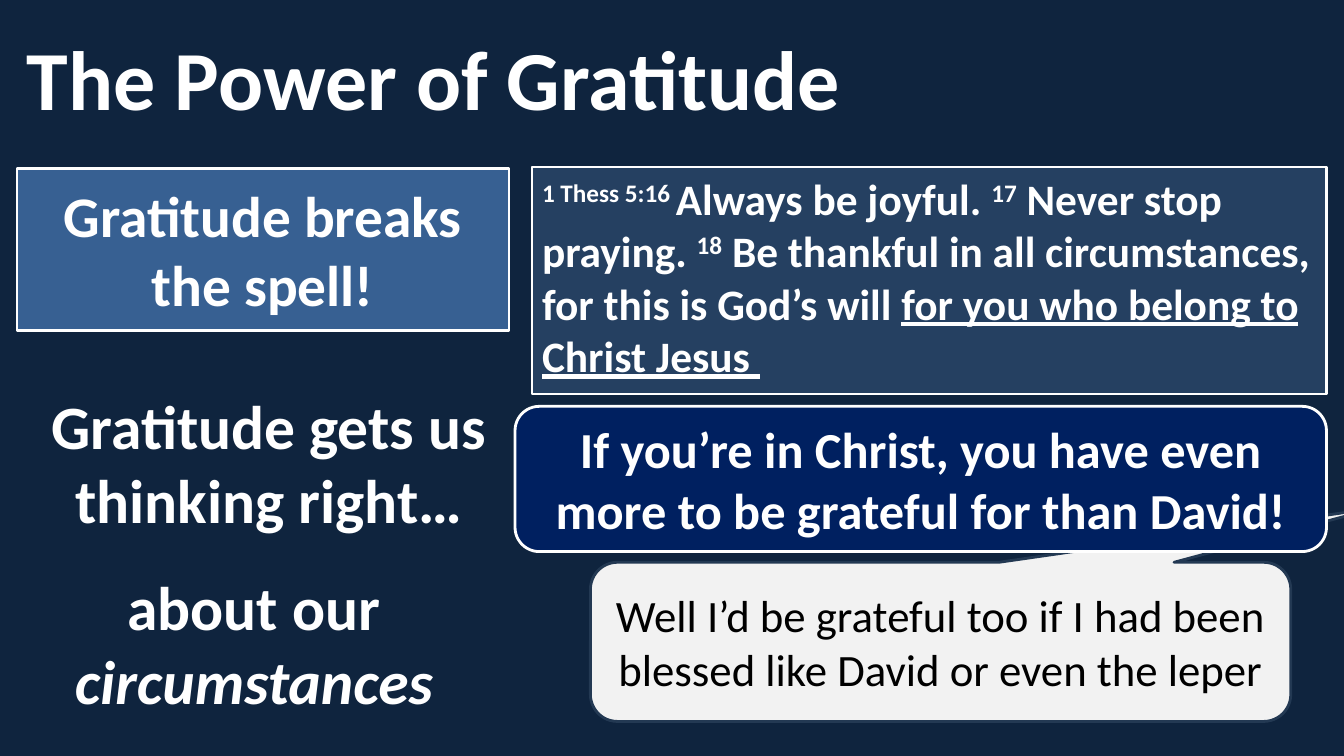
from dataclasses import dataclass
from typing import Optional

from pptx import Presentation
from pptx.dml.color import RGBColor
from pptx.enum.shapes import MSO_SHAPE
from pptx.enum.text import MSO_ANCHOR, PP_ALIGN
from pptx.util import Cm, Pt

WHITE = RGBColor(0xFF, 0xFF, 0xFF)
BLACK = RGBColor(0x00, 0x00, 0x00)
BACKGROUND = RGBColor(0x0F, 0x24, 0x3E)
STEEL = RGBColor(0x37, 0x60, 0x92)
SLATE = RGBColor(0x25, 0x40, 0x61)
NAVY = RGBColor(0x00, 0x20, 0x60)
PALE = RGBColor(0xF2, 0xF2, 0xF2)
CALLOUT_EDGE = RGBColor(0x23, 0x39, 0x53)


@dataclass
class Span:
    text: str
    italic: Optional[bool] = None
    underline: Optional[bool] = None
    raised: bool = False


@dataclass
class Panel:
    """A block of text; lengths are centimetres, and no shape means a text box."""
    left: float
    top: float
    width: float
    height: float
    size: float
    spans: list[Span]
    shape: Optional[MSO_SHAPE] = None
    fill: Optional[RGBColor] = None
    line: Optional[RGBColor] = None
    line_width: float = 2
    adjustments: tuple[float, ...] = ()
    color: RGBColor = WHITE
    bold: bool = True
    align: PP_ALIGN = PP_ALIGN.CENTER
    anchor: MSO_ANCHOR = MSO_ANCHOR.MIDDLE


PANELS = [
    Panel(0.43, 0.36, 23.29, 3.18, 60, [Span("The Power of Gratitude")],
          align=PP_ALIGN.LEFT),
    Panel(-0.58, 14.61, 13.97, 3.18, 44,
          [Span("about our "), Span("circumstances", italic=True)]),
    Panel(0.43, 4.24, 12.4, 4.09, 41, [Span("Gratitude breaks the spell!")],
          MSO_SHAPE.RECTANGLE, STEEL, WHITE),
    Panel(0.58, 9.6, 12.4, 4.09, 44, [Span("Gratitude gets us thinking right…")],
          MSO_SHAPE.ROUNDED_RECTANGLE),
    Panel(14.88, 14.17, 17.65, 4.01, 32,
          [Span("Well I’d be grateful too if I had been blessed like David "
                "or even the leper")],
          MSO_SHAPE.ROUNDED_RECTANGULAR_CALLOUT, PALE, CALLOUT_EDGE,
          adjustments=(0.62, -0.84, 0.17), color=BLACK, bold=False),
    Panel(13.41, 4.22, 20.02, 5.72, 31,
          [Span("1 Thess 5:16 ", raised=True),
           Span("Always be joyful. "),
           Span("17", raised=True),
           Span(" Never stop praying. "),
           Span("18", raised=True),
           Span(" Be thankful in all circumstances, for this is God’s will "),
           Span("for you who belong to Christ Jesus ", underline=True)],
          MSO_SHAPE.RECTANGLE, SLATE, WHITE, line_width=1.5,
          align=PP_ALIGN.LEFT, anchor=MSO_ANCHOR.TOP),
    Panel(12.98, 10.24, 20.45, 3.66, 36,
          [Span("If you’re in Christ, you have even more to be grateful for "
                "than David!")],
          MSO_SHAPE.ROUNDED_RECTANGLE, NAVY, WHITE),
]


def add_outline(s, panel: Panel) -> None:
    s.shadow.inherit = False
    for i, value in enumerate(panel.adjustments):
        s.adjustments[i] = value
    if panel.fill is None:
        s.fill.background()
    else:
        s.fill.solid()
        s.fill.fore_color.rgb = panel.fill
    if panel.line is None:
        s.line.fill.background()
    else:
        s.line.color.rgb = panel.line
        s.line.width = Pt(panel.line_width)


def add_span(p, span: Span, panel: Panel) -> None:
    r = p.add_run()
    r.text = span.text
    formats = {"name": "Calibri", "size": Pt(panel.size), "bold": panel.bold,
               "italic": span.italic, "underline": span.underline}
    for name, value in formats.items():
        setattr(r.font, name, value)
    r.font.color.rgb = panel.color
    if span.raised:
        r._r.get_or_add_rPr().set("baseline", "30000")


def add_panel(shapes, panel: Panel) -> None:
    box = [Cm(v) for v in (panel.left, panel.top, panel.width, panel.height)]
    if panel.shape is None:
        s = shapes.add_textbox(*box)
    else:
        s = shapes.add_shape(panel.shape, *box)
        add_outline(s, panel)
    tf = s.text_frame
    tf.word_wrap = True
    tf.vertical_anchor = panel.anchor
    p = tf.paragraphs[0]
    p.alignment = panel.align
    for span in panel.spans:
        add_span(p, span, panel)


def main() -> None:
    prs = Presentation()
    prs.slide_width, prs.slide_height = Cm(33.87), Cm(19.05)
    slide = prs.slides.add_slide(prs.slide_layouts[6])
    slide.background.fill.solid()
    slide.background.fill.fore_color.rgb = BACKGROUND
    for panel in PANELS:
        add_panel(slide.shapes, panel)
    prs.save("out.pptx")


if __name__ == "__main__":
    main()
